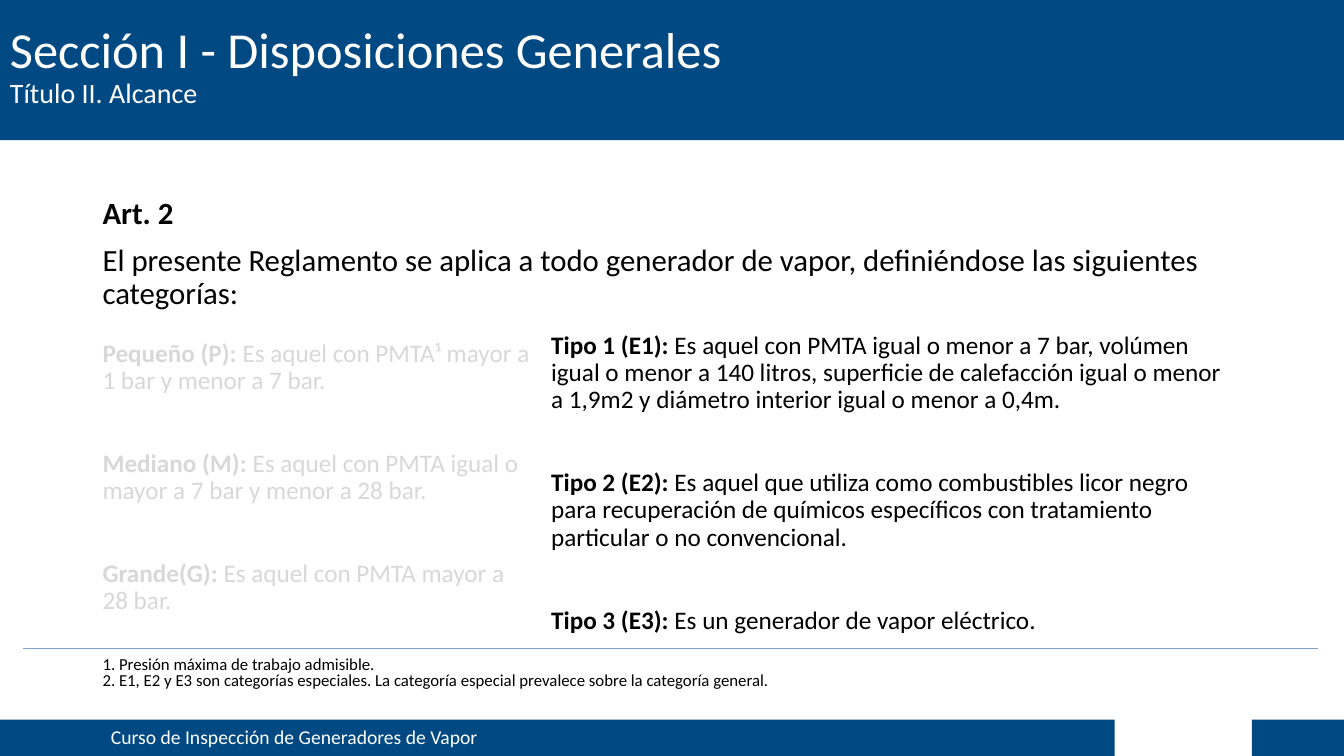
from dataclasses import dataclass

from lxml.etree import SubElement
from pptx import Presentation
from pptx.dml.color import RGBColor
from pptx.enum.shapes import MSO_CONNECTOR as Connector, MSO_SHAPE as Shape
from pptx.enum.text import MSO_ANCHOR as Anchor, PP_ALIGN as Align
from pptx.oxml.ns import qn
from pptx.util import Pt


@dataclass(frozen=True)
class Theme:
    font: str = "Calibri"
    navy: str = "004982"
    white: str = "FFFFFF"
    black: str = "000000"
    faded: str = "D8D8D8"
    rule: str = "81A2C7"
    title: float = 36
    subtitle: float = 20
    article: float = 22
    category: float = 18
    footer: float = 14
    note: float = 12


@dataclass(frozen=True)
class Area:
    left: float
    top: float
    width: float
    height: float


@dataclass(frozen=True)
class Line:
    """A paragraph with a bold lead followed by regular text."""
    lead: str
    rest: str
    size: float


@dataclass(frozen=True)
class Band:
    area: Area
    lines: tuple[Line, ...] = ()
    indent: float = 7.2


@dataclass(frozen=True)
class TextBlock:
    area: Area
    lines: tuple[Line, ...]
    color: str
    gap: float = 10
    spacing: float = 0.9


THEME = Theme()
MARGIN = 66.2
CATEGORY_GAP = 39.8
FOOTER_TOP = 514.1


def categories(*pairs: tuple[str, str]) -> tuple[Line, ...]:
    return tuple(Line(lead, rest, THEME.category) for lead, rest in pairs)


BANDS = (
    Band(Area(0, FOOTER_TOP, 796.3, 25.9),
         (Line("", "Curso de Inspección de Generadores de Vapor", THEME.footer),),
         indent=79.2),
    Band(Area(894.2, FOOTER_TOP, 65.8, 25.9)),
    Band(Area(0, -4.3, 960, 104.4),
         (Line("", "Sección I - Disposiciones Generales", THEME.title),
          Line("", "Título II. Alcance", THEME.subtitle))),
)

BLOCKS = (
    # Article
    TextBlock(
        Area(MARGIN, 137.5, 828, 104.4),
        (Line("Art. 2", "", THEME.article),
         Line("", "El presente Reglamento se aplica a todo generador de vapor, "
              "definiéndose las siguientes categorías:", THEME.article)),
        THEME.black),
    # General categories
    TextBlock(
        Area(MARGIN, 239.8, 321.1, 223.2),
        categories(
            ("Pequeño (P): ", "Es aquel con PMTA¹ mayor a 1 bar y menor a 7 bar."),
            ("Mediano (M): ", "Es aquel con PMTA igual o mayor a 7 bar y menor a 28 bar."),
            ("Grande(G): ", "Es aquel con PMTA mayor a 28 bar.")),
        THEME.faded, CATEGORY_GAP),
    # Special categories
    TextBlock(
        Area(386.6, 234, 500.4, 223.2),
        categories(
            ("Tipo 1 (E1): ", "Es aquel con PMTA igual o menor a 7 bar, volúmen igual o "
             "menor a 140 litros, superficie de calefacción igual o menor a 1,9m2 y "
             "diámetro interior igual o menor a 0,4m."),
            ("Tipo 2 (E2): ", "Es aquel que utiliza como combustibles licor negro para "
             "recuperación de químicos específicos con tratamiento particular o no "
             "convencional."),
            ("Tipo 3 (E3): ", "Es un generador de vapor eléctrico.")),
        THEME.black, CATEGORY_GAP),
    # Footnotes
    TextBlock(
        Area(MARGIN, 474.5, 815.8, 38.2),
        (Line("", "1. Presión máxima de trabajo admisible.", THEME.note),
         Line("", "2. E1, E2 y E3 son categorías especiales. La categoría especial "
              "prevalece sobre la categoría general.", THEME.note)),
        THEME.black, spacing=0.1),
)


def frame_of(area: Area) -> tuple[Pt, ...]:
    return tuple(Pt(n) for n in (area.left, area.top, area.width, area.height))


def write_lines(frame, lines: tuple[Line, ...], color: str,
                gap: float = 0, spacing: float = 0.9) -> None:
    frame.word_wrap = True
    for index, line in enumerate(lines):
        para = frame.add_paragraph() if index else frame.paragraphs[0]
        para.alignment = Align.LEFT
        para.line_spacing = spacing
        para.space_before = Pt(gap if index else 0)
        for text, bold in ((line.lead, True), (line.rest, False)):
            if not text:
                continue
            span = para.add_run()
            span.text = text
            span.font.name = THEME.font
            span.font.size = Pt(line.size)
            span.font.bold = bold
            span.font.color.rgb = RGBColor.from_string(color)


def draw_band(page, band: Band) -> None:
    box = page.shapes.add_shape(Shape.RECTANGLE, *frame_of(band.area))
    box.shadow.inherit = False
    box.fill.solid()
    box.fill.fore_color.rgb = RGBColor.from_string(THEME.navy)
    box.line.fill.background()
    frame = box.text_frame
    frame.vertical_anchor = Anchor.MIDDLE
    frame.margin_left = Pt(band.indent)
    write_lines(frame, band.lines, THEME.white)


def draw_block(page, block: TextBlock) -> None:
    box = page.shapes.add_textbox(*frame_of(block.area))
    write_lines(box.text_frame, block.lines, block.color, block.gap, block.spacing)


def draw_rule(page, left: float, right: float, top: float) -> None:
    rule = page.shapes.add_connector(
        Connector.STRAIGHT, Pt(left), Pt(top), Pt(right), Pt(top))
    rule.line.color.rgb = RGBColor.from_string(THEME.rule)
    rule.line.width = Pt(0.75)
    SubElement(rule._element.spPr, qn("a:effectLst"))


def main() -> None:
    deck = Presentation()
    deck.slide_width, deck.slide_height = Pt(960), Pt(540)
    page = deck.slides.add_slide(deck.slide_layouts[6])
    # Title and footer bands
    for band in BANDS:
        draw_band(page, band)
    # Body text, then the line above the footnotes
    for block in BLOCKS:
        draw_block(page, block)
    draw_rule(page, 16.6, 941.8, 463)
    deck.save("out.pptx")


if __name__ == "__main__":
    main()
